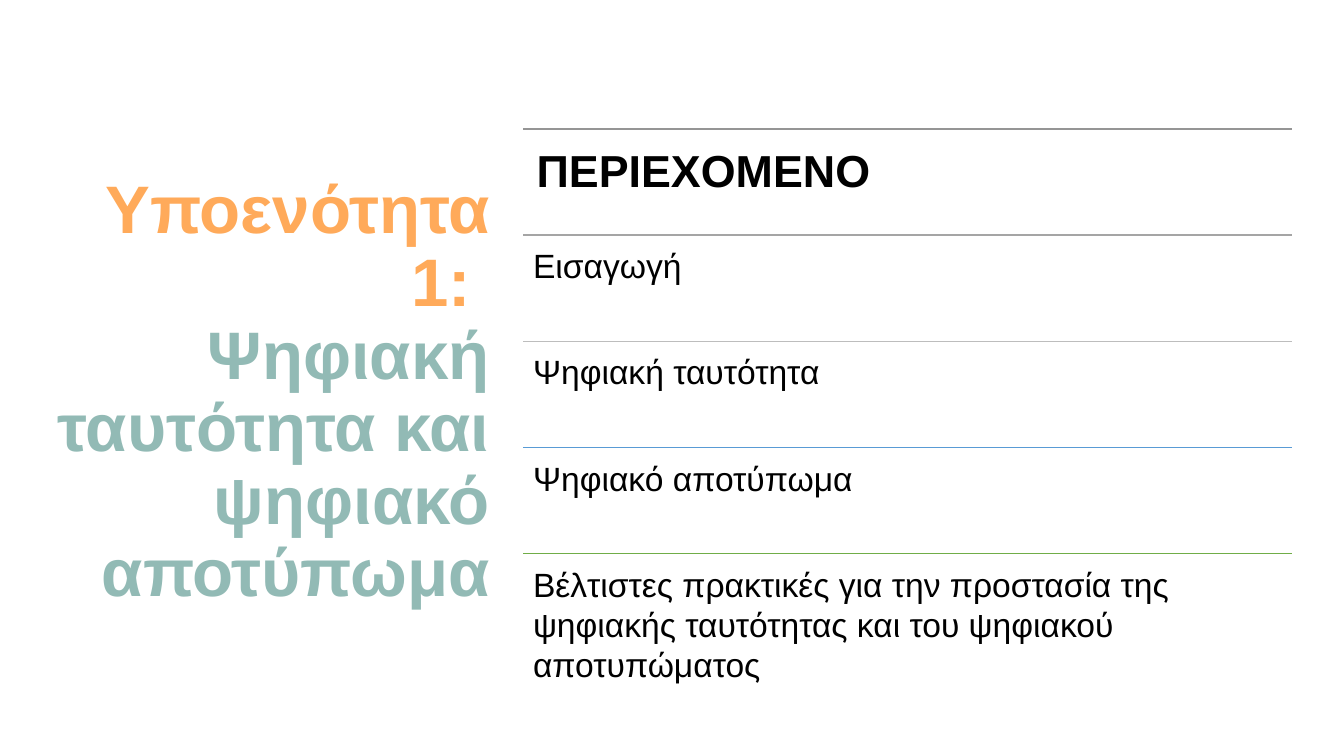
from lxml import etree
from pptx import Presentation
from pptx.dml.color import RGBColor
from pptx.enum.shapes import MSO_CONNECTOR
from pptx.enum.text import MSO_ANCHOR, MSO_AUTO_SIZE, PP_ALIGN
from pptx.oxml.ns import qn
from pptx.util import Pt

STRAIGHT = MSO_CONNECTOR.STRAIGHT
TOP, MIDDLE = MSO_ANCHOR.TOP, MSO_ANCHOR.MIDDLE
NO_FIT = MSO_AUTO_SIZE.NONE
LEFT, RIGHT = PP_ALIGN.LEFT, PP_ALIGN.RIGHT

TITLE = [
    ("Υποενότητα 1: ", "orange"),
    ("Ψηφιακή ταυτότητα και ψηφιακό αποτύπωμα", "teal"),
]
ROWS = [
    ("ΠΕΡΙΕΧΟΜΕΝΟ", "heading", "dark_grey"),
    ("Εισαγωγή", "item", "grey"),
    ("Ψηφιακή ταυτότητα", "item", "light_grey"),
    ("Ψηφιακό αποτύπωμα", "item", "blue"),
    ("Βέλτιστες πρακτικές για την προστασία της ψηφιακής ταυτότητας "
     "και του ψηφιακού αποτυπώματος", "item", "green"),
]
THEME = {
    "font": "Arial",
    "size": {"title": 48, "heading": 32, "item": 24},
    "inset": {"heading": 9.6, "item": 7.2},
    "rule": 1,
    "color": {
        "black": "000000", "orange": "FFAA5A", "teal": "92BAB5",
        "dark_grey": "959595", "grey": "A5A5A5", "light_grey": "BDBDBD",
        "blue": "599BD5", "green": "70AD47",
    },
}
TITLE_BOX = (27.5, 61.2, 329.6, 440)
LIST_X, LIST_Y, LIST_W, ROW_H = 373.7, 92.2, 549.4, 75.8


def color(name):
    return RGBColor.from_string(THEME["color"][name])


def set_font(font, role, bold):
    font.name = THEME["font"]
    font.size = Pt(THEME["size"][role])
    font.bold = bold


def add_title(slide):
    sp = slide.shapes.title
    sp.left, sp.top, sp.width, sp.height = map(Pt, TITLE_BOX)
    tf = sp.text_frame
    tf.word_wrap, tf.auto_size, tf.vertical_anchor = True, NO_FIT, MIDDLE
    p = tf.paragraphs[0]
    p.alignment, p.line_spacing = RIGHT, 0.9
    set_font(p.font, "title", True)
    for i, (text, name) in enumerate(TITLE):
        if i:
            p.add_line_break()
        r = p.add_run()
        r.text = text
        set_font(r.font, "title", True)
        r.font.color.rgb = color(name)


def add_row(slide, y, text, role, rule):
    line = slide.shapes.add_connector(
        STRAIGHT, Pt(LIST_X), Pt(y), Pt(LIST_X + LIST_W), Pt(y))
    line.line.color.rgb = color(rule)
    line.line.width = Pt(THEME["rule"])
    etree.SubElement(line._element.spPr, qn("a:effectLst"))

    sp = slide.shapes.add_textbox(Pt(LIST_X), Pt(y), Pt(LIST_W), Pt(ROW_H))
    tf = sp.text_frame
    tf.word_wrap, tf.auto_size, tf.vertical_anchor = True, NO_FIT, TOP
    inset = Pt(THEME["inset"][role])
    tf.margin_left = tf.margin_right = tf.margin_top = tf.margin_bottom = inset
    p = tf.paragraphs[0]
    p.text = text
    p.alignment = LEFT
    set_font(p.font, role, role == "heading")
    p.font.color.rgb = color("black")


def main():
    prs = Presentation()
    prs.slide_width, prs.slide_height = Pt(960), Pt(540)
    slide = prs.slides.add_slide(prs.slide_layouts[5])
    add_title(slide)
    for i, row in enumerate(ROWS):
        add_row(slide, LIST_Y + i * ROW_H, *row)
    prs.save("out.pptx")


if __name__ == "__main__":
    main()
